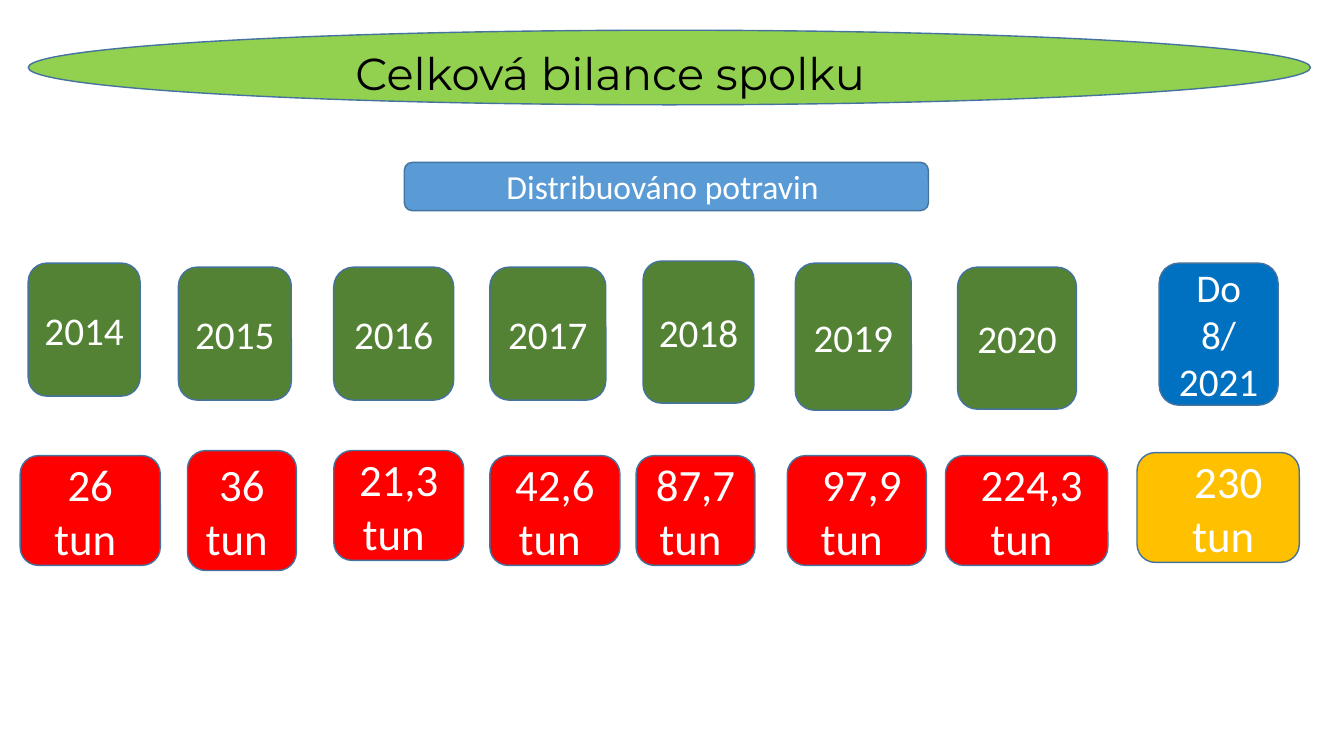
from dataclasses import dataclass

from pptx import Presentation
from pptx import util as u
from pptx.dml.color import RGBColor
from pptx.enum import shapes, text

COLORS = {
    "title": "92D050", "banner": "5B9BD5", "year": "548235", "current": "0070C0",
    "tons": "FF0000", "current_tons": "FFC000", "outline": "43739E",
    "light": "FFFFFF", "dark": "000000",
}
WIDTH, HEIGHT = u.Inches(13.33), u.Inches(7.5)
INSET = u.Inches(0.1)


@dataclass(frozen=True)
class Area:
    """A rectangle in percent of the slide's width and height."""
    x: float
    y: float
    w: float
    h: float

    def emu(self) -> tuple[int, int, int, int]:
        return (round(self.x * WIDTH / 100), round(self.y * HEIGHT / 100),
                round(self.w * WIDTH / 100), round(self.h * HEIGHT / 100))


@dataclass(frozen=True)
class Card:
    words: str
    area: Area
    fill: str
    size: int
    indent: float = 0


YEARS = [
    Card("2014", Area(2.1, 34.8, 8.33, 17.6), "year", 28),
    Card("2015", Area(13.28, 35.33, 8.4, 17.6), "year", 28),
    Card("2016", Area(24.83, 35.33, 8.93, 17.6), "year", 28),
    Card("2017", Area(36.45, 35.33, 8.63, 17.6), "year", 28),
    Card("2018", Area(47.85, 34.53, 8.25, 18.8), "year", 28),
    Card("2019", Area(59.18, 34.8, 8.63, 19.47), "year", 28),
    Card("2020", Area(71.25, 35.33, 8.85, 18.8), "year", 28),
    Card("Do 8/\n2021", Area(86.25, 34.8, 8.85, 18.8), "current", 28),
]
TONS = [
    Card("26 tun ", Area(1.5, 60.27, 10.43, 14.53), "tons", 32),
    Card("36 tun ", Area(13.95, 59.6, 8.1, 15.87), "tons", 32),
    Card("21,3 tun ", Area(24.83, 59.6, 9.68, 14.53), "tons", 32),
    Card("42,6 tun ", Area(36.45, 60.27, 9.68, 14.53), "tons", 32),
    Card("87,7 tun ", Area(47.33, 60.27, 8.85, 14.53), "tons", 32),
    Card(" 97,9 tun ", Area(58.58, 60.27, 10.35, 14.53), "tons", 32),
    Card(" 224,3 tun ", Area(70.35, 60.27, 12.08, 14.53), "tons", 32),
    Card("230\ntun ", Area(84.6, 59.87, 12.08, 14.53), "current_tons", 32, indent=1.5),
]
BANNER = Card("Distribuováno potravin ", Area(30.08, 21.47, 39, 6.4), "banner", 24)


def rgb(name: str) -> RGBColor:
    return RGBColor.from_string(COLORS[name])


def write(tf, words: str, font: str, size: int, color: str, align) -> None:
    tf.word_wrap = True
    tf.text = words
    for p in tf.paragraphs:
        p.alignment = align
        for r in p.runs:
            r.font.name = font
            r.font.size = u.Pt(size)
            r.font.color.rgb = rgb(color)


def add_outlined(s, kind, area: Area, fill: str):
    sp = s.shapes.add_shape(kind, *area.emu())
    sp.shadow.inherit = False
    sp.fill.solid()
    sp.fill.fore_color.rgb = rgb(fill)
    sp.line.color.rgb = rgb("outline")
    sp.line.width = u.Pt(1)
    return sp


def add_card(s, card: Card) -> None:
    sp = add_outlined(s, shapes.MSO_SHAPE.ROUNDED_RECTANGLE, card.area, card.fill)
    tf = sp.text_frame
    tf.vertical_anchor = text.MSO_ANCHOR.MIDDLE
    tf.margin_left = INSET + round(card.indent * WIDTH / 100)
    write(tf, card.words, "Calibri", card.size, "light", text.PP_ALIGN.CENTER)


def add_title(s) -> None:
    add_outlined(s, shapes.MSO_SHAPE.OVAL, Area(2.1, 4, 95.4, 9.87), "title")
    sp = s.shapes.add_textbox(*Area(25.7, 5.33, 61.2, 8.53).emu())
    write(sp.text_frame, "Celková bilance spolku", "Montserrat", 32, "dark",
          text.PP_ALIGN.LEFT)


def main() -> None:
    prs = Presentation()
    prs.slide_width, prs.slide_height = WIDTH, HEIGHT
    s = prs.slides.add_slide(prs.slide_layouts[6])
    add_title(s)
    for card in [BANNER, *YEARS, *TONS]:
        add_card(s, card)
    prs.save("out.pptx")


if __name__ == "__main__":
    main()
